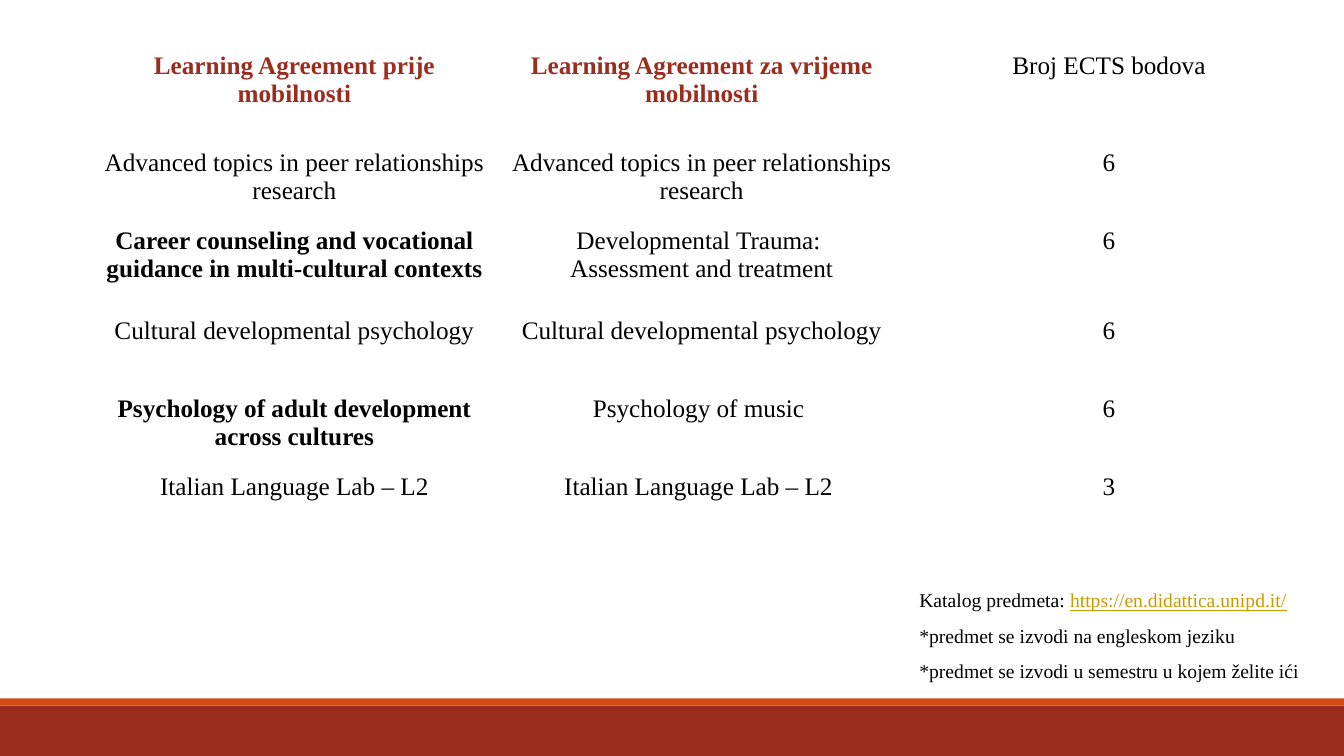
from dataclasses import dataclass

from pptx import Presentation
from pptx import util as u
from pptx.dml import color
from pptx.enum import shapes, text

FONT = "Times New Roman"
BLACK, RUST, ORANGE, GOLD = "000000", "9B2D1F", "D34817", "CC9900"


@dataclass(frozen=True)
class Bar:
    top: float
    height: float
    fill: str


@dataclass(frozen=True)
class Span:
    words: str
    color: str = BLACK
    bold: bool = False
    underline: bool = False


@dataclass(frozen=True)
class CourseRow:
    height: float
    before: Span
    during: Span
    credits: str


BARS = [Bar(7, 0.5, RUST), Bar(6.93, 0.07, ORANGE)]

PEER = Span("Advanced topics in peer relationships research")
CULTURAL = Span("Cultural developmental psychology")
ROWS = [
    CourseRow(0.96, Span("Learning Agreement prije mobilnosti", RUST, True),
              Span("Learning Agreement za vrijeme mobilnosti", RUST, True), "Broj ECTS bodova"),
    CourseRow(0.77, PEER, PEER, "6"),
    CourseRow(0.9, Span("Career counseling and vocational guidance in multi-cultural contexts", bold=True),
              Span("Developmental Trauma: \nAssessment and treatment"), "6"),
    CourseRow(0.77, CULTURAL, CULTURAL, "6"),
    CourseRow(0.77, Span("Psychology of adult development across cultures", bold=True),
              Span("Psychology of music "), "6"),
    CourseRow(0.77, Span("Italian Language Lab – L2"), Span("Italian Language Lab – L2 "), "3"),
]

NOTES = [
    [Span("Katalog predmeta: "), Span("https://en.didattica.unipd.it/", GOLD, underline=True)],
    [Span("*predmet se izvodi na engleskom jeziku")],
    [Span("*predmet se izvodi u semestru u kojem želite ići")],
]


def rgb(value: str) -> color.RGBColor:
    return color.RGBColor.from_string(value)


def write(frame, paragraphs: list[list[Span]], size: float, align=None, spacing=None) -> None:
    """Fill a text frame with one paragraph per list of spans."""
    frame.word_wrap = True
    for index, spans in enumerate(paragraphs):
        paragraph = frame.add_paragraph() if index else frame.paragraphs[0]
        paragraph.alignment = align
        paragraph.line_spacing = spacing
        for span in spans:
            run = paragraph.add_run()
            run.text = span.words
            run.font.name = FONT
            run.font.size = u.Pt(size)
            run.font.bold = span.bold
            run.font.underline = span.underline
            run.font.color.rgb = rgb(span.color)


def add_bar(slide, bar: Bar, width: int) -> None:
    shape = slide.shapes.add_shape(shapes.MSO_SHAPE.RECTANGLE, 0, u.Inches(bar.top),
                                   width, u.Inches(bar.height))
    shape.shadow.inherit = False
    shape.fill.solid()
    shape.fill.fore_color.rgb = rgb(bar.fill)
    shape.line.fill.background()


def add_course_table(slide, rows: list[CourseRow]) -> None:
    height = sum(row.height for row in rows)
    table = slide.shapes.add_table(len(rows), 3, u.Inches(0.9), u.Inches(0.47),
                                   u.Inches(12.12), u.Inches(height)).table
    table.first_row = False
    table.horz_banding = False
    for table_row, row in zip(table.rows, rows):
        table_row.height = u.Inches(row.height)
        for cell, span in zip(table_row.cells, (row.before, row.during, Span(row.credits))):
            cell.fill.background()
            lines = [[Span(line, span.color, span.bold)] for line in span.words.split("\n")]
            write(cell.text_frame, lines, 18, text.PP_ALIGN.CENTER)


def add_notes_box(slide) -> None:
    box = slide.shapes.add_textbox(u.Inches(9.02), u.Inches(5.67), u.Inches(4.24), u.Inches(1.12))
    write(box.text_frame, NOTES, 14, spacing=1.5)
    box.text_frame.auto_size = text.MSO_AUTO_SIZE.SHAPE_TO_FIT_TEXT


def main() -> None:
    presentation = Presentation()
    presentation.slide_width = u.Inches(13.33)
    presentation.slide_height = u.Inches(7.5)
    slide = presentation.slides.add_slide(presentation.slide_layouts[6])
    for bar in BARS:
        add_bar(slide, bar, presentation.slide_width)
    add_course_table(slide, ROWS)
    add_notes_box(slide)
    presentation.save("out.pptx")


if __name__ == "__main__":
    main()
